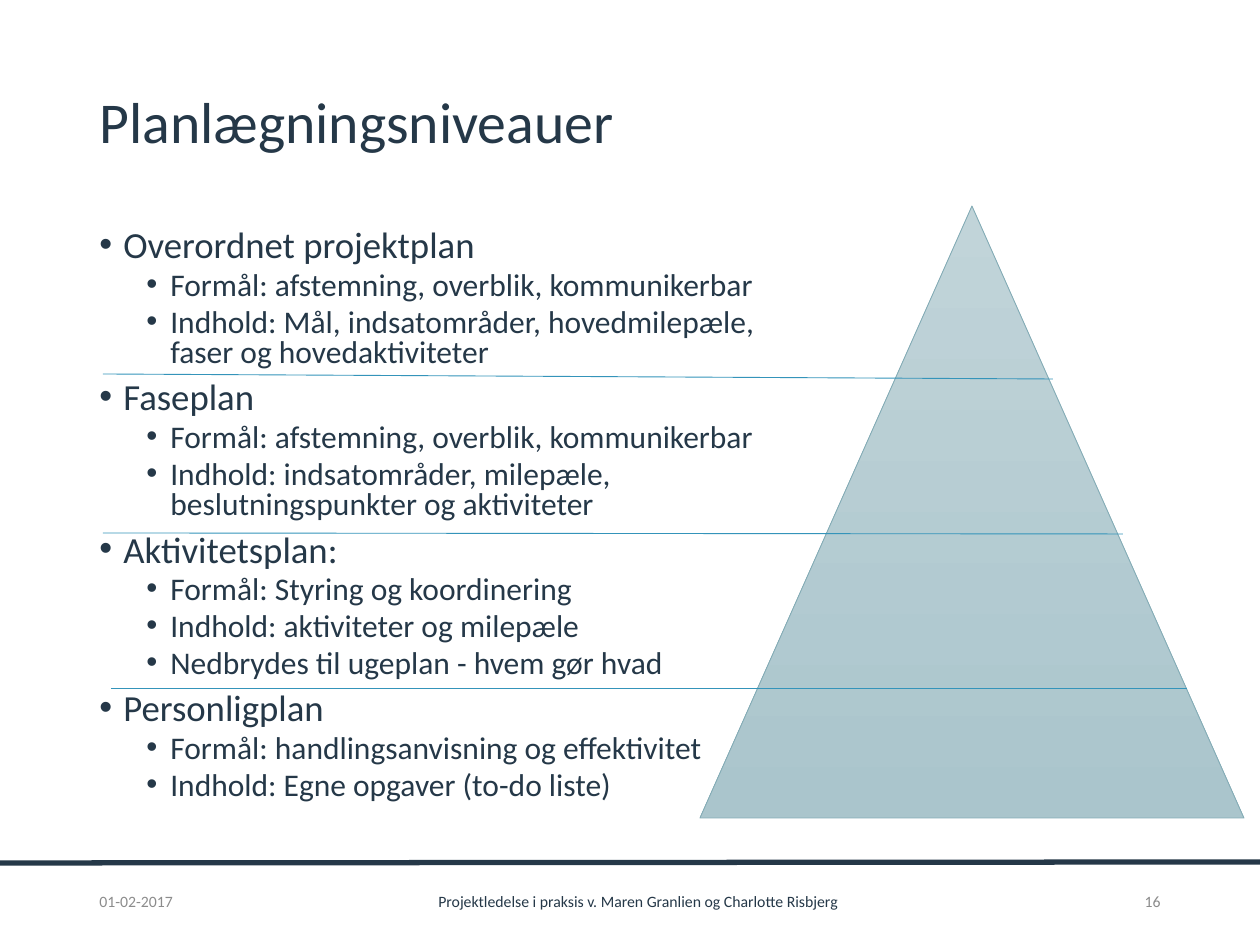
"""Build the slide on the four planning levels beside a pyramid."""
from dataclasses import dataclass

from lxml.etree import SubElement
from pptx import Presentation
from pptx.dml.color import RGBColor
from pptx.enum.shapes import MSO_CONNECTOR as Connector, MSO_SHAPE as Shape
from pptx.enum.text import MSO_ANCHOR as Anchor, PP_ALIGN as Align
from pptx.oxml.ns import qn
from pptx.util import Emu, Pt


@dataclass(frozen=True)
class Theme:
    font: str = "Calibri"
    ink: str = "253848"
    muted: str = "8C8C8C"
    accent: str = "3494BA"
    pyramid_top: str = "C1D4D9"
    pyramid_base: str = "AAC5CC"
    pyramid_edge: str = "84ACB6"
    title: int = 33
    level: int = 21
    detail: int = 18
    footer: int = 9
    thin: float = 0.5
    thick: float = 3


THEME = Theme()
WIDTH, HEIGHT = 1260, 945
EMU_PER_PX = 914400 / 126

TITLE = "Planlægningsniveauer"
LEVELS = [
    ("Overordnet projektplan", [
        "Formål: afstemning, overblik, kommunikerbar",
        "Indhold: Mål, indsatområder, hovedmilepæle, \nfaser og hovedaktiviteter"]),
    ("Faseplan", [
        "Formål: afstemning, overblik, kommunikerbar",
        "Indhold: indsatområder, milepæle, \nbeslutningspunkter og aktiviteter"]),
    ("Aktivitetsplan:", [
        "Formål: Styring og koordinering",
        "Indhold: aktiviteter og milepæle",
        "Nedbrydes til ugeplan - hvem gør hvad"]),
    ("Personligplan", [
        "Formål: handlingsanvisning og effektivitet",
        "Indhold: Egne opgaver (to-do liste)"]),
]
FOOTERS = [
    ("01-02-2017", 87, 125, Align.LEFT, THEME.muted),
    ("Projektledelse i praksis v. Maren Granlien og Charlotte Risbjerg",
     223, 830, Align.CENTER, THEME.ink),
    ("16", 1076, 97, Align.RIGHT, THEME.muted),
]
TITLE_BOX = (87, 33, 1086, 183)
BODY_BOX = (87, 224, 1086, 612)
PYRAMID_BOX = (700, 206, 544, 612)
FOOTER_TOP, FOOTER_HEIGHT = 876, 50
BASE_RULE = (0, 863, WIDTH, 862)
DIVIDERS = [(103, 374, 1053, 379), (103, 533, 1123, 534), (111, 688, 1187, 688)]
HEADING_STYLE = {"size": THEME.level, "indent": 24, "before": 7.5}
DETAIL_STYLE = {"size": THEME.detail, "indent": 71, "before": 3.75, "depth": 1}
HANG = 24


def px(value):
    return Emu(round(value * EMU_PER_PX))


def scaled(values):
    return [px(value) for value in values]


def apply(target, **values):
    for name, value in values.items():
        setattr(target, name, value)


def add_text_frame(slide, box, anchor):
    frame = slide.shapes.add_textbox(*scaled(box)).text_frame
    apply(frame, word_wrap=True, vertical_anchor=anchor)
    return frame


def write(paragraph, text, size, color, **layout):
    paragraph.text = text
    apply(paragraph, **layout)
    for run in paragraph.runs:
        apply(run.font, name=THEME.font, size=Pt(size))
        run.font.color.rgb = RGBColor.from_string(color)


def write_bullet(paragraph, text, size, indent, before, depth=0):
    write(paragraph, text, size, THEME.ink, level=depth,
          line_spacing=0.8, space_before=Pt(before))
    properties = paragraph._p.get_or_add_pPr()
    properties.set("marL", str(px(indent)))
    properties.set("indent", str(-px(HANG)))
    SubElement(properties, qn("a:buFont")).set("typeface", "Arial")
    SubElement(properties, qn("a:buChar")).set("char", "•")


def add_rule(slide, ends, color, width):
    rule = slide.shapes.add_connector(Connector.STRAIGHT, *scaled(ends))
    rule.line.color.rgb = RGBColor.from_string(color)
    rule.line.width = Pt(width)
    SubElement(rule._element.spPr, qn("a:effectLst"))


def add_levels(slide):
    frame = add_text_frame(slide, BODY_BOX, Anchor.TOP)
    bullets = []
    for heading, details in LEVELS:
        bullets.append((heading, HEADING_STYLE))
        bullets += [(detail, DETAIL_STYLE) for detail in details]
    for index, (text, style) in enumerate(bullets):
        paragraph = frame.add_paragraph() if index else frame.paragraphs[0]
        write_bullet(paragraph, text, **style)


def add_pyramid(slide):
    pyramid = slide.shapes.add_shape(Shape.ISOSCELES_TRIANGLE, *scaled(PYRAMID_BOX))
    pyramid.shadow.inherit = False
    pyramid.fill.gradient()
    pyramid.fill.gradient_angle = 270
    colors = (THEME.pyramid_top, THEME.pyramid_base)
    for stop, color in zip(pyramid.fill.gradient_stops, colors):
        stop.color.rgb = RGBColor.from_string(color)
    pyramid.line.color.rgb = RGBColor.from_string(THEME.pyramid_edge)
    pyramid.line.width = Pt(THEME.thin)


def main():
    presentation = Presentation()
    apply(presentation, slide_width=px(WIDTH), slide_height=px(HEIGHT))
    slide = presentation.slides.add_slide(presentation.slide_layouts[6])
    add_rule(slide, BASE_RULE, THEME.ink, THEME.thick)
    title = add_text_frame(slide, TITLE_BOX, Anchor.MIDDLE)
    write(title.paragraphs[0], TITLE, THEME.title, THEME.ink, line_spacing=0.9)
    add_levels(slide)
    for text, left, width, alignment, color in FOOTERS:
        box = (left, FOOTER_TOP, width, FOOTER_HEIGHT)
        footer = add_text_frame(slide, box, Anchor.MIDDLE)
        write(footer.paragraphs[0], text, THEME.footer, color, alignment=alignment)
    add_pyramid(slide)
    for ends in DIVIDERS:
        add_rule(slide, ends, THEME.accent, THEME.thin)
    presentation.save("out.pptx")


if __name__ == "__main__":
    main()
